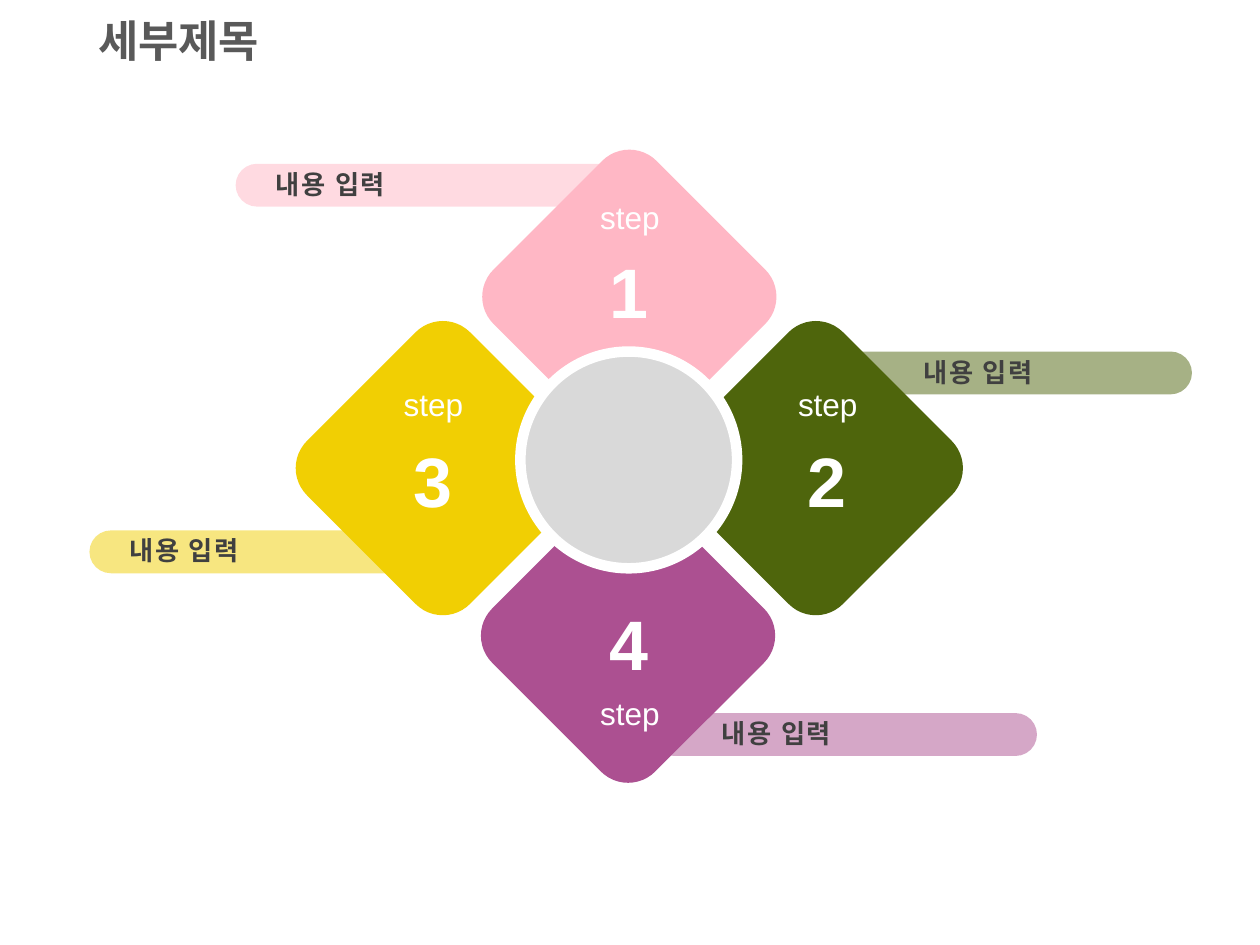
from dataclasses import dataclass

from lxml import etree
from pptx import Presentation
from pptx.dml.color import RGBColor
from pptx.enum.shapes import MSO_SHAPE
from pptx.enum.text import MSO_ANCHOR, MSO_AUTO_SIZE, PP_ALIGN
from pptx.oxml.ns import qn
from pptx.shapes.autoshape import Shape
from pptx.slide import Slide
from pptx.util import Inches, Pt

ROUND = MSO_SHAPE.ROUNDED_RECTANGLE
OVAL = MSO_SHAPE.OVAL
LEFT = PP_ALIGN.LEFT
MIDDLE = MSO_ANCHOR.MIDDLE
GROW = MSO_AUTO_SIZE.SHAPE_TO_FIT_TEXT

PINK = RGBColor(0xFF, 0xB7, 0xC5)
GREEN = RGBColor(0x4E, 0x65, 0x0C)
GOLD = RGBColor(0xF1, 0xCF, 0x03)
PLUM = RGBColor(0xAC, 0x50, 0x91)
GRAY = RGBColor(0xD9, 0xD9, 0xD9)
DARK = RGBColor(0x40, 0x40, 0x40)
HEAD = RGBColor(0x59, 0x59, 0x59)
WHITE = RGBColor(0xFF, 0xFF, 0xFF)

# The slide is a grid of 100 columns by 75 rows of square cells.
COLS, ROWS = 100, 75
CELL = Inches(0.1)
SIDE = 18.3
BAR_W, BAR_H = 30.5, 3.4
NOTE_W, NOTE_H = 22.3, 3.5
NUM_W, NUM_H = 5.3, 7.7
WORD_W, WORD_H = 6.8, 4


@dataclass(frozen=True)
class Step:
    """One step; places are in cells, and word_dy counts from the number."""
    num: str
    color: RGBColor
    tile_x: float
    tile_y: float
    num_x: float
    num_y: float
    word_dy: float
    bar_x: float
    bar_y: float
    note_dx: float


STEPS = [
    Step("1", PINK, 40.8, 14.4, 47.4, 19.2, -4, 18.7, 13, 2.2),
    Step("4", PLUM, 40.7, 41.3, 47.4, 47.2, 7.4, 51.8, 56.6, 4.5),
    Step("2", GREEN, 55.6, 28, 63.1, 34.2, -4.1, 64.1, 27.9, 8.2),
    Step("3", GOLD, 26, 28, 31.8, 34.2, -4.1, 7.1, 42.1, 2.2),
]


def cells(*counts: float) -> list[int]:
    return [round(n * CELL) for n in counts]


def add_shape(slide: Slide, kind: int, color: RGBColor, *box: float) -> Shape:
    shape = slide.shapes.add_shape(kind, *cells(*box))
    shape.shadow.inherit = False
    shape.fill.solid()
    shape.fill.fore_color.rgb = color
    shape.line.fill.background()
    return shape


def add_text(slide: Slide, text: str, size: int, color: RGBColor,
             *box: float, bold: bool = True, wrap: bool = False,
             gap: int = 0) -> None:
    """Add a text box; gap is the letter spacing in hundredths of a point."""
    frame = slide.shapes.add_textbox(*cells(*box)).text_frame
    frame.word_wrap = wrap
    frame.auto_size = GROW
    run = frame.paragraphs[0].add_run()
    run.text = text
    font = run.font
    font.name, font.size, font.bold = "Arial", Pt(size), bold
    font.color.rgb = color
    if gap:
        run._r.get_or_add_rPr().set("spc", str(gap))


def add_title(slide: Slide, text: str) -> None:
    title = slide.shapes.title
    title.left, title.top, title.width, title.height = cells(6.8, 0.6, 86.2, 5.7)
    frame = title.text_frame
    frame.vertical_anchor = MIDDLE
    para = frame.paragraphs[0]
    para.alignment = LEFT
    para.line_spacing = 0.9
    run = para.add_run()
    run.text = text
    font = run.font
    font.name, font.size, font.bold = "Calibri", Pt(25), True
    font.color.rgb = HEAD


def add_bar(slide: Slide, step: Step) -> None:
    """Add the half-transparent bar of a step and its note."""
    bar = add_shape(slide, ROUND, step.color, step.bar_x, step.bar_y, BAR_W, BAR_H)
    bar.adjustments[0] = 0.5
    tint = bar._element.spPr.find(qn("a:solidFill"))[0]
    etree.SubElement(tint, qn("a:alpha"), val="50000")
    add_text(slide, "내용 입력", 15, DARK, step.bar_x + step.note_dx,
             step.bar_y - 0.15, NOTE_W, NOTE_H, wrap=True, gap=100)


def add_tile(slide: Slide, step: Step) -> None:
    tile = add_shape(slide, ROUND, step.color, step.tile_x, step.tile_y, SIDE, SIDE)
    tile.rotation = 315


def add_label(slide: Slide, step: Step) -> None:
    add_text(slide, step.num, 40, WHITE, step.num_x, step.num_y, NUM_W, NUM_H)
    word_x = step.num_x + (NUM_W - WORD_W) / 2
    add_text(slide, "step", 18, WHITE, word_x, step.num_y + step.word_dy,
             WORD_W, WORD_H, bold=False)


def main() -> None:
    deck = Presentation()
    deck.slide_width, deck.slide_height = cells(COLS, ROWS)
    slide = deck.slides.add_slide(deck.slide_layouts[5])
    add_title(slide, "세부제목")
    for step in STEPS:
        add_bar(slide, step)
    for step in STEPS:
        add_tile(slide, step)
    hub = add_shape(slide, OVAL, GRAY, 41.3, 27.9, 17.2, 17.2)
    hub.line.color.rgb = WHITE
    hub.line.width = Pt(6)
    for step in STEPS:
        add_label(slide, step)
    deck.save("out.pptx")


if __name__ == "__main__":
    main()
